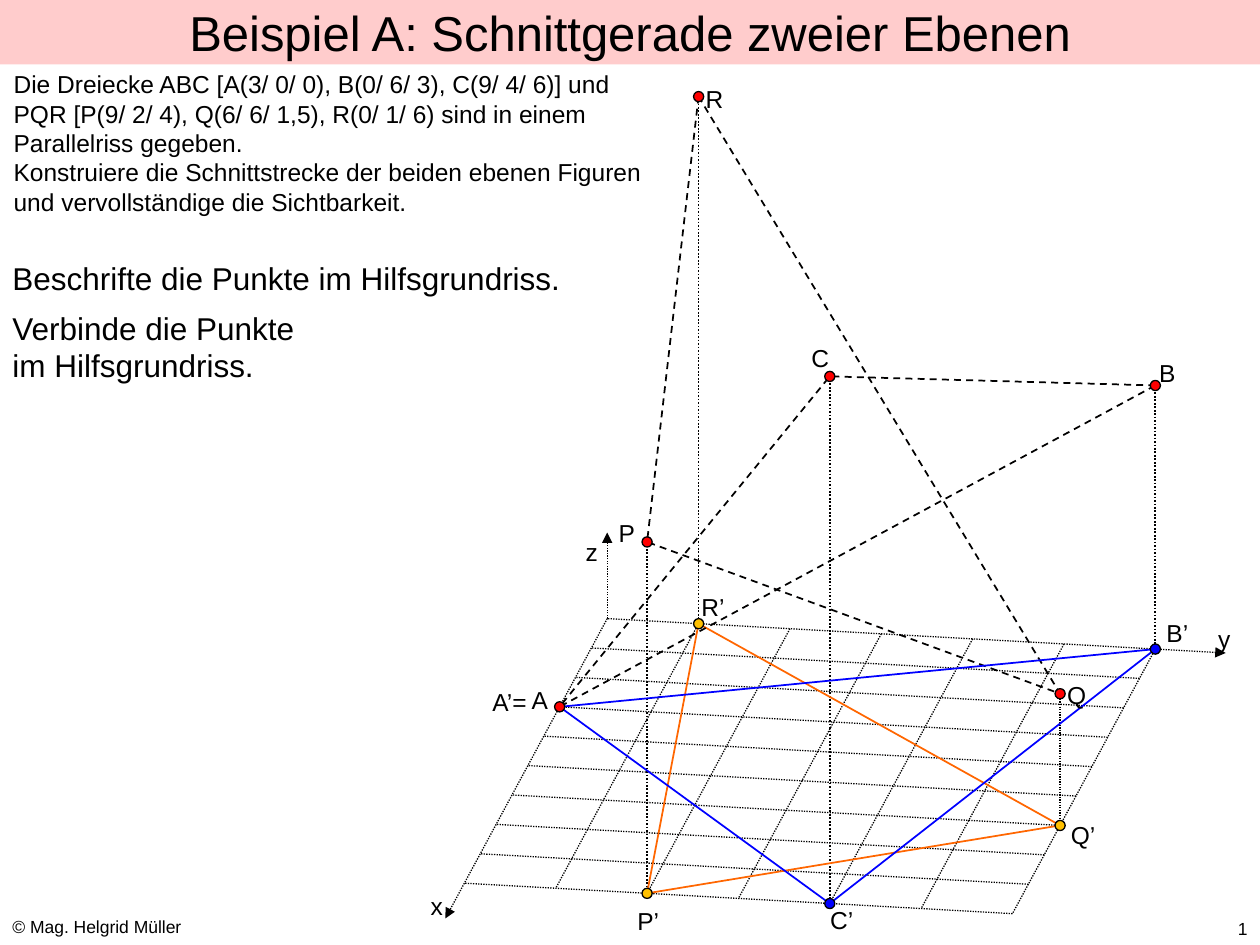
from lxml.etree import SubElement
from pptx import Presentation
from pptx.dml.color import RGBColor
from pptx.enum.dml import MSO_LINE
from pptx.enum.shapes import MSO_CONNECTOR, MSO_SHAPE
from pptx.enum.text import MSO_ANCHOR, PP_ALIGN
from pptx.oxml.ns import qn
from pptx.util import Pt

prs = Presentation()
prs.slide_width, prs.slide_height = Pt(720), Pt(540)
slide = prs.slides.add_slide(prs.slide_layouts[6])
shapes = slide.shapes
color = RGBColor.from_string


def project(x, y, z=0):
    return Pt(347 - 9.07 * x + 52.2 * y), Pt(353.5 + 16.8 * x + 2.9 * y - 50.2 * z)


def stroke(points, width, dash=None, hue="010000", closed=False, arrow=False):
    if len(points) == 2:
        outline = shapes.add_connector(MSO_CONNECTOR.STRAIGHT, *points[0], *points[1])
    else:
        builder = shapes.build_freeform(*points[0], scale=1.0)
        builder.add_line_segments(points[1:], close=closed)
        outline = builder.convert_to_shape()
        outline.fill.background()
    outline.line.color.rgb = color(hue)
    outline.line.width = Pt(width)
    if dash:
        outline.line.dash_style = dash
    properties = outline.element.spPr
    if arrow:
        SubElement(properties.find(qn("a:ln")), qn("a:tailEnd"), type="triangle")
    SubElement(properties, qn("a:effectLst"))


title = shapes.add_shape(MSO_SHAPE.RECTANGLE, 0, 0, Pt(720), Pt(36.8))
title.shadow.inherit = False
title.fill.solid()
title.fill.fore_color.rgb = color("FFCCCC")
title.line.fill.background()
title.text_frame.text = "Beispiel A: Schnittgerade zweier Ebenen"
title.text_frame.vertical_anchor = MSO_ANCHOR.MIDDLE
heading = title.text_frame.paragraphs[0]
heading.alignment = PP_ALIGN.CENTER
heading.font.size = Pt(28)
heading.font.name = "Arial"
heading.font.color.rgb = color("000000")

DOTTED, DASHED = MSO_LINE.ROUND_DOT, MSO_LINE.DASH
for x in range(10):
    stroke([project(x, y) for y in range(6, -1, -1)], 0.75, DOTTED)
for x in range(9):
    for y in range(6, -1, -1):
        stroke([project(x, y), project(x + 1, y)], 0.75, DOTTED)

for start, tip in [((9, 0, 0), (10.2, 0, 0)), ((0, 6, 0), (0, 6.77, 0)), ((0, 0, 0), (0, 0, 0.98))]:
    stroke([project(*start), project(*tip)], 0.75, DOTTED, arrow=True)

A, B, C = (3, 0, 0), (0, 6, 3), (9, 4, 6)
P, Q, R = (9, 2, 4), (6, 6, 1.5), (0, 1, 6)
for vertex, width in [(Q, 0.75), (B, 1), (P, 1), (C, 1), (R, 1)]:
    stroke([project(*vertex), project(*vertex[:2])], width, DOTTED)

for triangle, plan_line, plan_fill in [((R, P, Q), "FF6600", "FFC000"), ((B, C, A), "0000FF", "0000FF")]:
    in_space = [project(*vertex) for vertex in triangle]
    in_plan = [project(*vertex[:2]) for vertex in triangle]
    stroke(in_plan, 1, hue=plan_line, closed=True)
    stroke(in_space + in_space[:1], 1, DASHED)
    for centers, fill in [(in_plan, plan_fill), (in_space, "FF0000")]:
        for left, top in centers:
            if fill == plan_fill and (left, top) in in_space:
                continue
            dot = shapes.add_shape(MSO_SHAPE.OVAL, left - Pt(2.9), top - Pt(2.9), Pt(5.8), Pt(5.8))
            dot.shadow.inherit = False
            dot.fill.solid()
            dot.fill.fore_color.rgb = color(fill)
            dot.line.color.rgb = color("000000")
            dot.line.width = Pt(0.75)

task = (
    "Die Dreiecke ABC [A(3/ 0/ 0), B(0/ 6/ 3), C(9/ 4/ 6)] und\v"
    "PQR [P(9/ 2/ 4), Q(6/ 6/ 1,5), R(0/ 1/ 6) sind in einem Parallelriss gegeben.\n"
    "Konstruiere die Schnittstrecke der beiden ebenen Figuren und vervollständige die Sichtbarkeit."
)
texts = [
    ("© Mag. Helgrid Müller", 0, 519.8, 179, 19.4, 10),
    ("1", 679, 521.3, 41, 19.4, 10),
    (task, 0.7, 36, 391.7, 92, 14),
    ("Beschrifte die Punkte im Hilfsgrundriss.", 0, 144.7, 335.5, 28.8, 18),
    ("Verbinde die Punkte\vim Hilfsgrundriss.", 0, 172.8, 193.7, 51, 18),
    ("x", 239, 505.4, 54, 24.5, 14),
    ("y", 689, 352.8, 28, 24.5, 14),
    ("z", 327.6, 303.1, 21.6, 24.5, 14),
    ("P’", 357.1, 514.1, 33.8, 24.5, 14),
    ("Q’", 604.8, 465.1, 33.8, 24.5, 14),
    ("R’", 393.8, 334.8, 33.8, 24.5, 14),
    ("A’=", 274.3, 388.8, 41.8, 24.5, 14),
    ("B’", 659.5, 349.9, 33.8, 24.5, 14),
    ("C’", 467.3, 513.4, 33.8, 24.5, 14),
    ("A", 303.8, 391.7, 9.4, 17.3, 14),
    ("B", 662.4, 204.5, 9.4, 17.3, 14),
    ("C", 463.7, 195.8, 10.1, 17.3, 14),
    ("P", 353.5, 295.9, 15.8, 17.3, 14),
    ("Q", 609.8, 388.8, 10.8, 17.3, 14),
    ("R", 403.2, 48.2, 10.1, 17.3, 14),
]
for wording, left, top, width, height, size in texts:
    frame = shapes.add_textbox(Pt(left), Pt(top), Pt(width), Pt(height)).text_frame
    frame.word_wrap = True
    if wording in list("ABCPQR"):
        frame.word_wrap = False
        frame.margin_left = frame.margin_right = frame.margin_top = frame.margin_bottom = 0
    frame.text = wording
    for paragraph in frame.paragraphs:
        paragraph.alignment = PP_ALIGN.RIGHT if wording == "1" else PP_ALIGN.LEFT
        for run in paragraph.runs:
            run.font.size = Pt(size)
            run.font.name = "Arial"
            run.font.color.rgb = color("000000")

prs.save("out.pptx")
